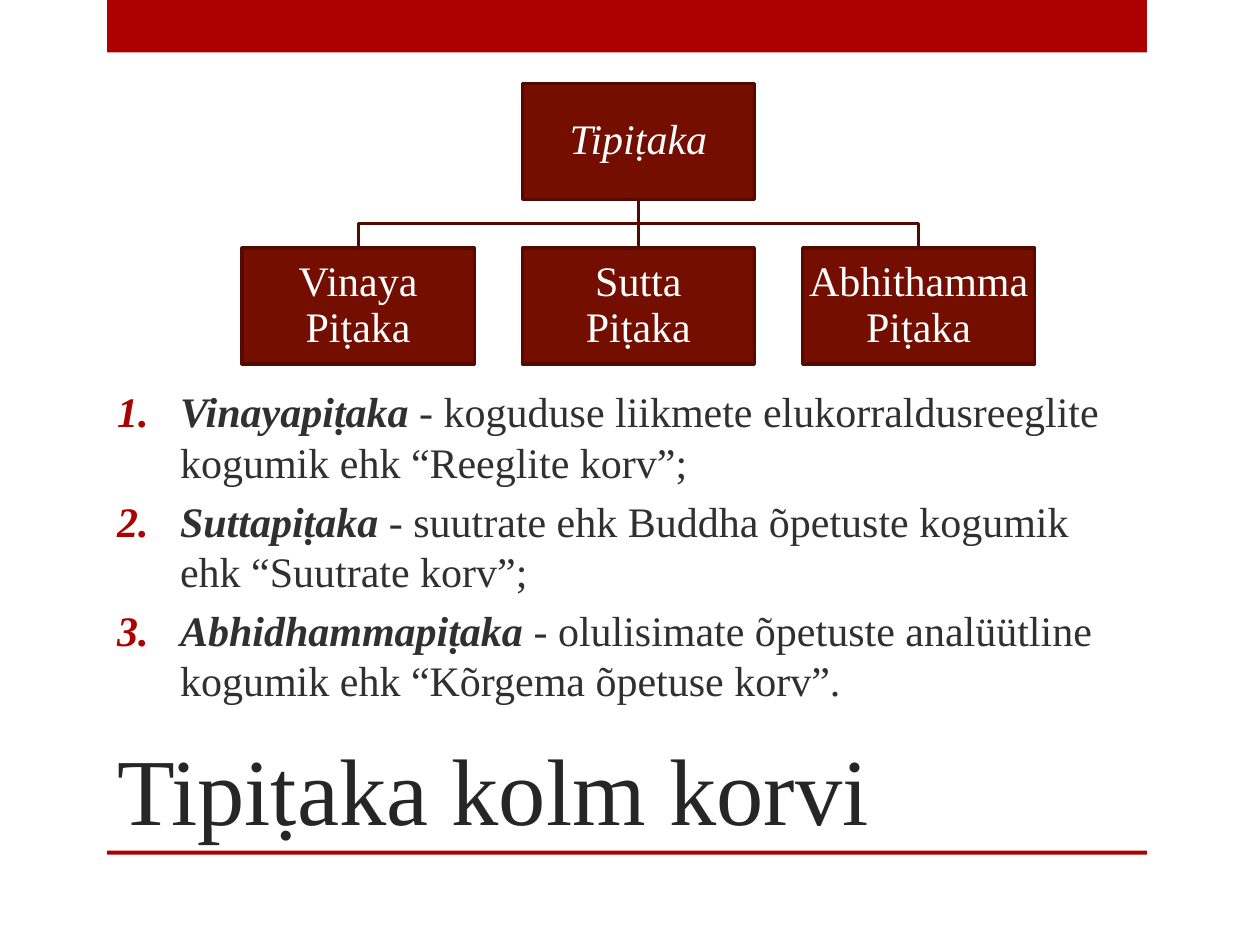
from typing import NamedTuple

from lxml.etree import SubElement
from pptx import Presentation
from pptx.dml.color import RGBColor
from pptx.enum.shapes import MSO_CONNECTOR, MSO_SHAPE
from pptx.enum.text import MSO_ANCHOR, PP_ALIGN
from pptx.oxml.ns import qn
from pptx.util import Cm, Pt

FONT = "Times New Roman"
RED, MAROON, DARK_MAROON = "AD0101", "730E00", "550A00"
BOX_W, BOX_H = 4.68, 2.34
ROOT_TOP, CHILD_TOP = 1.68, 5.0
CENTER_X, STEP = 12.87, 5.65


class Bar(NamedTuple):
    top: float
    height: float


class Box(NamedTuple):
    center: float
    top: float
    label: str
    italic: bool = False


class Basket(NamedTuple):
    name: str
    description: str


BARS = [Bar(0, 1.06), Bar(17.15, 0.08)]
ROOT = Box(CENTER_X, ROOT_TOP, "Tipiṭaka", True)
CHILDREN = [
    Box(CENTER_X + (i - 1) * STEP, CHILD_TOP, label)
    for i, label in enumerate(["Vinaya\vPiṭaka", "Sutta\vPiṭaka", "Abhithamma\vPiṭaka"])
]
BASKETS = [
    Basket("Vinayapiṭaka", " - koguduse liikmete elukorraldusreeglite kogumik ehk “Reeglite korv”;"),
    Basket("Suttapiṭaka", " - suutrate ehk Buddha õpetuste kogumik ehk “Suutrate korv”;"),
    Basket("Abhidhammapiṭaka", " - olulisimate õpetuste analüütline kogumik ehk “Kõrgema õpetuse korv”."),
]


def color(hex_value: str) -> RGBColor:
    return RGBColor.from_string(hex_value)


def add_text(p, text: str, *, size=24, fill="303030", bold=False, italic=False) -> None:
    for i, line in enumerate(text.split("\v")):
        if i:
            p.add_line_break()
        r = p.add_run()
        r.text = line
        f = r.font
        f.name, f.size, f.bold, f.italic = FONT, Pt(size), bold, italic
        f.color.rgb = color(fill)


def add_rect(s, left: float, top: float, width: float, height: float, fill: str):
    sp = s.shapes.add_shape(MSO_SHAPE.RECTANGLE, Cm(left), Cm(top), Cm(width), Cm(height))
    sp.shadow.inherit = False
    sp.fill.solid()
    sp.fill.fore_color.rgb = color(fill)
    sp.line.fill.background()
    return sp


def set_line(sp) -> None:
    sp.line.color.rgb = color(DARK_MAROON)
    sp.line.width = Pt(1.75)


def add_box(s, box: Box) -> None:
    sp = add_rect(s, box.center - BOX_W / 2, box.top, BOX_W, BOX_H, MAROON)
    set_line(sp)
    tf = sp.text_frame
    tf.word_wrap = True
    tf.vertical_anchor = MSO_ANCHOR.MIDDLE
    tf.margin_left = tf.margin_right = tf.margin_top = tf.margin_bottom = Cm(0.05)
    p = tf.paragraphs[0]
    p.alignment = PP_ALIGN.CENTER
    p.line_spacing = 0.9
    add_text(p, box.label, fill="FFFFFF", italic=box.italic)


def add_link(s, parent: Box, child: Box) -> None:
    start = parent.top + BOX_H
    middle = (start + child.top) / 2
    if child.center == parent.center:
        sp = s.shapes.add_connector(
            MSO_CONNECTOR.STRAIGHT, Cm(parent.center), Cm(start), Cm(child.center), Cm(child.top))
        SubElement(sp._element.spPr, qn("a:effectLst"))
    else:
        fb = s.shapes.build_freeform(Cm(parent.center), Cm(start))
        corners = [(parent.center, middle), (child.center, middle), (child.center, child.top)]
        fb.add_line_segments([(Cm(x), Cm(y)) for x, y in corners], close=False)
        sp = fb.convert_to_shape()
        sp.shadow.inherit = False
        sp.fill.background()
    set_line(sp)


def add_frame(s, left: float, top: float, width: float, height: float, anchor):
    tf = s.shapes.add_textbox(Cm(left), Cm(top), Cm(width), Cm(height)).text_frame
    tf.word_wrap = True
    tf.vertical_anchor = anchor
    return tf


def number(p) -> None:
    pPr = p._p.get_or_add_pPr()
    pPr.set("marL", str(Cm(1.27)))
    pPr.set("indent", str(-Cm(1.27)))
    SubElement(SubElement(pPr, qn("a:buClr")), qn("a:srgbClr"), val=RED)
    SubElement(pPr, qn("a:buFont"), typeface=FONT)
    SubElement(pPr, qn("a:buAutoNum"), type="arabicPeriod")


def add_baskets(s) -> None:
    tf = add_frame(s, 2.11, 7.78, 20.96, 6.5, MSO_ANCHOR.TOP)
    tf.margin_top = tf.margin_bottom = 0
    for i, basket in enumerate(BASKETS):
        p = tf.add_paragraph() if i else tf.paragraphs[0]
        p.space_after = Pt(4.8)
        number(p)
        add_text(p, basket.name, bold=True, italic=True)
        add_text(p, basket.description)


def main() -> None:
    prs = Presentation()
    prs.slide_width, prs.slide_height = Cm(25.4), Cm(19.05)
    s = prs.slides.add_slide(prs.slide_layouts[6])
    for bar in BARS:
        add_rect(s, 2.16, bar.top, 20.96, bar.height, RED)
    title = add_frame(s, 2.11, 12.7, 18.85, 4.45, MSO_ANCHOR.BOTTOM)
    add_text(title.paragraphs[0], "Tipiṭaka kolm korvi", size=54, fill="262626")
    add_baskets(s)
    for child in CHILDREN:
        add_link(s, ROOT, child)
    for box in [ROOT, *CHILDREN]:
        add_box(s, box)
    prs.save("out.pptx")


if __name__ == "__main__":
    main()
